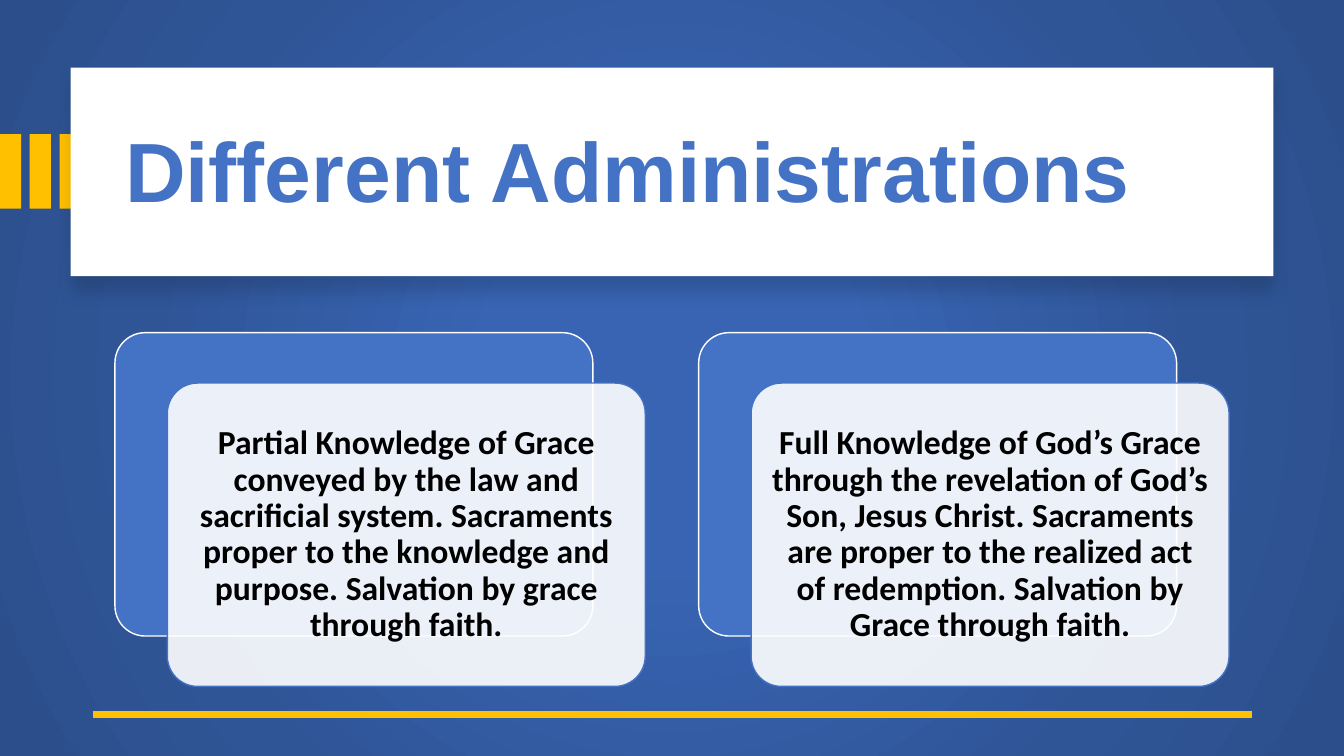
from lxml import etree
from pptx import Presentation
from pptx.dml.color import RGBColor as RGB
from pptx.enum.shapes import MSO_CONNECTOR as LINK, MSO_SHAPE as KIND
from pptx.enum.text import MSO_ANCHOR as ANCHOR, MSO_AUTO_SIZE as FIT, PP_ALIGN as ALIGN
from pptx.oxml import parse_xml
from pptx.oxml.ns import nsdecls, qn
from pptx.util import Inches, Pt

# Content
TITLE = "Different Administrations"
CARDS = [
    "Partial Knowledge of Grace conveyed by the law and sacrificial system. "
    "Sacraments proper to the knowledge and purpose. Salvation by grace through faith.",
    "Full Knowledge of God’s Grace through the revelation of God’s Son, Jesus Christ. "
    "Sacraments are proper to the realized act of redemption. Salvation by Grace through faith.",
]

# Theme
THEME = {
    "blue": "4472C4", "gold": "FFC000", "white": "FFFFFF", "black": "000000",
    "back": [(0, "3864B3"), (23, "3864B3"), (69, "2F5597"), (97, "2C4F8C")],
    "head": {"name": "Arial", "size": Pt(60), "bold": True},
    "body": {"name": "Calibri", "size": Pt(24), "bold": True},
}

# Layout in inches
BAR = {"left": 0, "top": 1.33, "step": 0.295, "width": 0.21, "height": 0.74}
CARD = {"left": 1.14, "top": 3.3, "step": 5.79, "width": 4.74, "height": 3.01}
SHIFT = (0.52, 0.5)


def tint(name):
    return RGB.from_string(THEME[name])


def put(item, form):
    for key, value in form.items():
        setattr(item, key, value)


def draw(kind, box, fill, line=None):
    part = slide.shapes.add_shape(kind, *map(Inches, box))
    part.shadow.inherit = False
    part.fill.solid()
    part.fill.fore_color.rgb = tint(fill)
    if line:
        part.line.color.rgb = tint(line)
        part.line.width = Pt(1)
    else:
        part.line.fill.background()
    return part


def write(part, text, font, color, align, space=0):
    frame = part.text_frame
    put(frame, {"word_wrap": True, "auto_size": FIT.NONE,
                "vertical_anchor": ANCHOR.MIDDLE, "text": text})
    for side in ("left", "top", "right", "bottom"):
        setattr(frame, f"margin_{side}", Inches(0.1 if space else 0.05 if side in ("top", "bottom") else 0.1))
    para = frame.paragraphs[0]
    put(para, {"alignment": align, "line_spacing": 0.9, "space_after": Pt(space)})
    put(para.runs[0].font, THEME[font])
    para.runs[0].font.color.rgb = tint(color)


deck = Presentation()
put(deck, {"slide_width": Inches(13.33), "slide_height": Inches(7.5)})
slide = deck.slides.add_slide(deck.slide_layouts[5])

# Radial background
stops = "".join(f'<a:gs pos="{at * 1000}"><a:srgbClr val="{color}"/></a:gs>'
                for at, color in THEME["back"])
slide.element.find(qn("p:cSld")).insert(0, parse_xml(
    f'<p:bg {nsdecls("p", "a")}><p:bgPr><a:gradFill rotWithShape="1"><a:gsLst>{stops}</a:gsLst>'
    '<a:path path="circle"><a:fillToRect l="50000" t="50000" r="50000" b="50000"/></a:path>'
    '</a:gradFill><a:effectLst/></p:bgPr></p:bg>'))

# Gold bars
for num in range(3):
    draw(KIND.RECTANGLE, (BAR["left"] + num * BAR["step"], BAR["top"],
                          BAR["width"], BAR["height"]), "gold")

# Title panel with soft shadow
panel = draw(KIND.RECTANGLE, (0.7, 0.67, 11.93, 2.07), "white")
glow = panel.element.spPr.find(qn("a:effectLst"))
glow.append(parse_xml(
    f'<a:outerShdw {nsdecls("a")} blurRad="{Pt(11)}" dist="{Pt(10)}" dir="5400000" '
    'algn="t" rotWithShape="0"><a:srgbClr val="000000"><a:alpha val="15000"/></a:srgbClr>'
    '</a:outerShdw>'))

# Title, raised above the panel
title = slide.shapes.title
put(title, {"left": Inches(1.14), "top": Inches(0.89),
            "width": Inches(11.13), "height": Inches(1.7)})
write(title, TITLE, "head", "blue", ALIGN.LEFT)
title.element.getparent().append(title.element)

# Gold rule
rule = slide.shapes.add_connector(LINK.STRAIGHT, *map(Inches, (12.42, 7.09, 0.92, 7.09)))
rule.line.color.rgb = tint("gold")
rule.line.width = Pt(4.5)
etree.SubElement(rule.element.spPr, qn("a:effectLst"))

# Paired cards
for num, text in enumerate(CARDS):
    left, top = CARD["left"] + num * CARD["step"], CARD["top"]
    size = (CARD["width"], CARD["height"])
    rear = draw(KIND.ROUNDED_RECTANGLE, (left, top, *size), "blue", "white")
    front = draw(KIND.ROUNDED_RECTANGLE, (left + SHIFT[0], top + SHIFT[1], *size),
                 "white", "blue")
    for part in (rear, front):
        part.adjustments[0] = 0.1
    shade = front.element.spPr.find(qn("a:solidFill"))[0]
    etree.SubElement(shade, qn("a:alpha"), val="90000")
    write(front, text, "body", "black", ALIGN.CENTER, 8.4)

deck.save("out.pptx")
